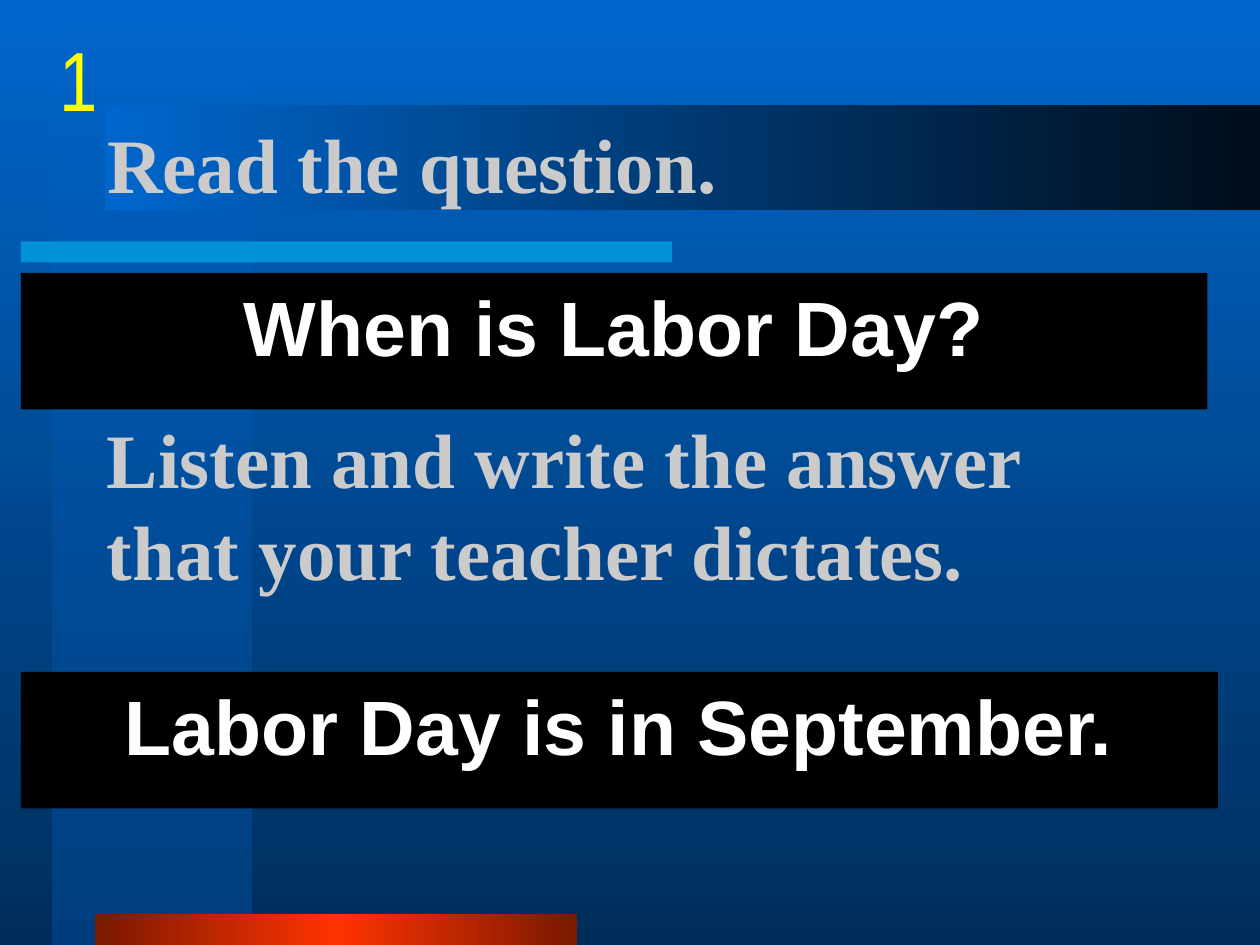
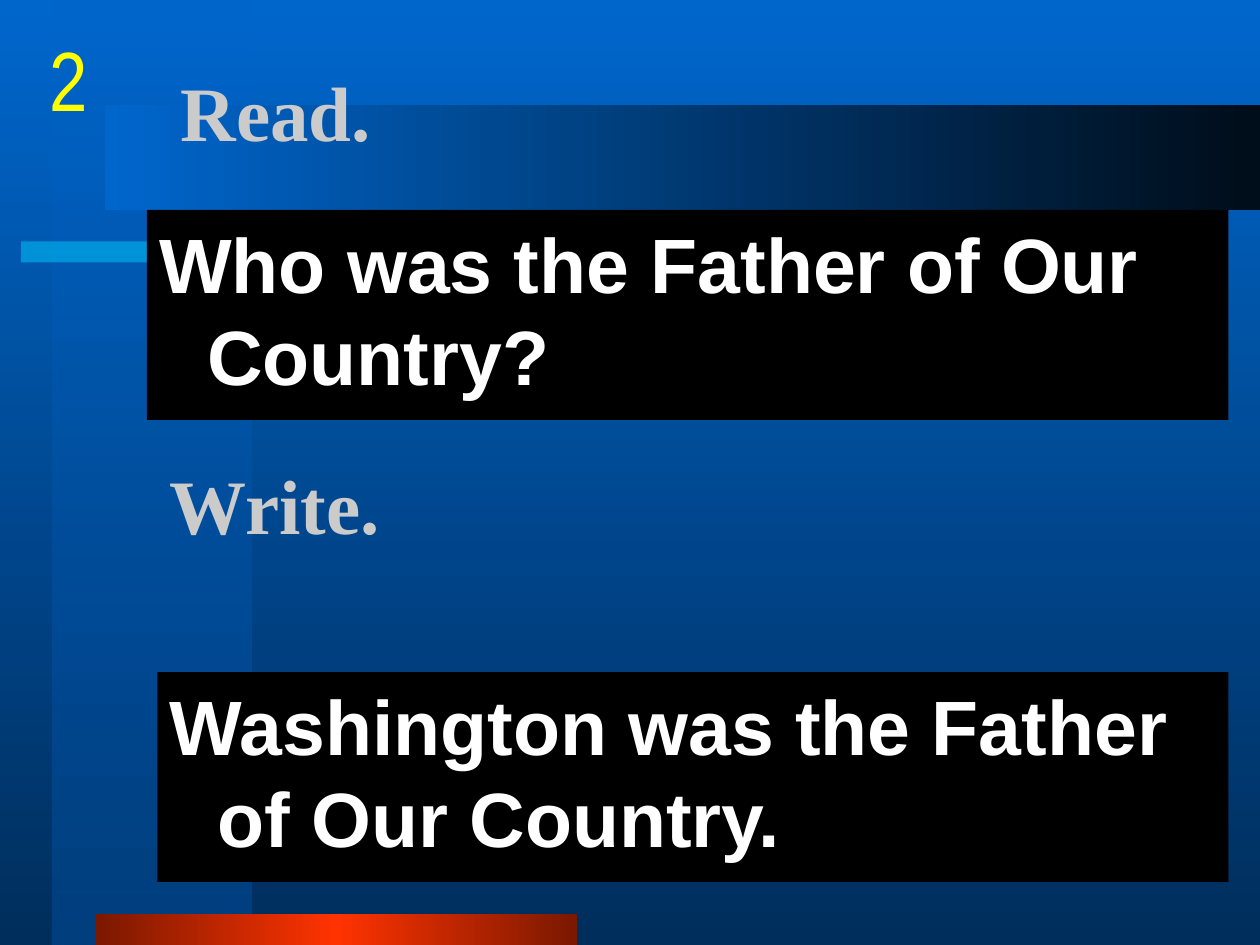
"""Build two dictation slides: a question to read and an answer to write."""
from typing import Any, NamedTuple, Optional

import lxml.etree
import pptx
import pptx.dml.color
import pptx.enum.shapes
import pptx.enum.text
import pptx.oxml.ns
import pptx.util

RGB = pptx.dml.color.RGBColor
ALIGN = pptx.enum.text.PP_ALIGN
ANCHOR = pptx.enum.text.MSO_ANCHOR
qn = pptx.oxml.ns.qn

BLUE = RGB(0x00, 0x66, 0xCC)
NAVY = RGB(0x00, 0x2E, 0x5C)
SHADE = RGB(0x00, 0x3F, 0x7E)
INK = RGB(0x00, 0x0D, 0x1A)
CYAN = RGB(0x00, 0xCC, 0xFF)
RED = RGB(0xFF, 0x33, 0x00)
RUST = RGB(0x7A, 0x18, 0x00)
GREY = RGB(0xCB, 0xCB, 0xCB)
WHITE = RGB(0xFF, 0xFF, 0xFF)
BLACK = RGB(0x00, 0x00, 0x00)
GOLD = RGB(0xFF, 0xFF, 0x00)

WIDE = pptx.util.Inches(10)
HIGH = pptx.util.Inches(7.5)
COLS, ROWS = 120, 90
DOWN, ACROSS = 270, 0


class Box(NamedTuple):
    col: float
    row: float
    cols: float
    rows: float


class Stop(NamedTuple):
    color: RGB
    alpha: int = 100


class Band(NamedTuple):
    box: Box
    stops: list[Stop]
    angle: int = ACROSS


class Style(NamedTuple):
    font: str
    size: int
    color: RGB
    bold: bool = True
    align: ALIGN = ALIGN.LEFT
    anchor: ANCHOR = ANCHOR.TOP
    wrap: bool = True
    fill: Optional[RGB] = None
    hang: float = 0
    before: float = 0


class Label(NamedTuple):
    text: str
    box: Box


class Card(NamedTuple):
    title: Label
    ask: Label
    task: Label
    reply: Label
    number: Label
    align: ALIGN


HEAD = Style("Times New Roman", 44, GREY, anchor=ANCHOR.MIDDLE)
PANEL = Style("Arial", 44, WHITE, fill=BLACK, hang=0.38, before=3.6)
COUNT = Style("Arial Narrow", 48, GOLD, bold=False, align=ALIGN.CENTER, wrap=False)

BANDS = [
    Band(Box(5, 0, 19, 90), [Stop(BLUE, 50), Stop(SHADE)], DOWN),
    Band(Box(2, 23, 62, 2), [Stop(CYAN, 50)]),
    Band(Box(9, 87, 46, 3), [Stop(RUST), Stop(RED), Stop(RUST)]),
    Band(Box(10, 10, 110, 10), [Stop(BLUE), Stop(INK)]),
]

CARDS = [
    Card(
        Label("Read the question.", Box(9, 8, 102, 15)),
        Label("When is Labor Day?", Box(2, 26, 113, 13)),
        Label("Listen and write the answer that your teacher dictates.", Box(9, 38, 102, 20)),
        Label("Labor Day is in September.", Box(2, 64, 114, 13)),
        Label("1", Box(6, 2, 3, 10)),
        ALIGN.CENTER,
    ),
    Card(
        Label("Read.", Box(16, 3, 102, 15)),
        Label("Who was the Father of Our Country?", Box(14, 20, 103, 20)),
        Label("Write.", Box(15, 38, 102, 20)),
        Label("Washington was the Father of Our Country.", Box(15, 64, 102, 20)),
        Label("2", Box(4, 2, 5, 10)),
        ALIGN.LEFT,
    ),
]


def place(box: Box) -> tuple[int, int, int, int]:
    """Turn grid columns and rows into left, top, width and height."""
    return (
        round(WIDE * box.col / COLS),
        round(HIGH * box.row / ROWS),
        round(WIDE * box.cols / COLS),
        round(HIGH * box.rows / ROWS),
    )


def fade(node: Any, alpha: int) -> None:
    """Make a colour node partly transparent."""
    if alpha < 100:
        lxml.etree.SubElement(node, qn("a:alpha")).set("val", str(alpha * 1000))


def paint(fill: Any, root: Any, stops: list[Stop], angle: int) -> None:
    """Fill with one colour, or with a gradient of evenly spaced stops."""
    if len(stops) == 1:
        fill.solid()
        fill.fore_color.rgb = stops[0].color
        fade(next(root.iter(qn("a:srgbClr"))), stops[0].alpha)
        return
    fill.gradient()
    fill.gradient_angle = angle
    marks = next(root.iter(qn("a:gsLst")))
    for old in list(marks):
        marks.remove(old)
    for i, stop in enumerate(stops):
        mark = lxml.etree.SubElement(marks, qn("a:gs"))
        mark.set("pos", str(round(100000 * i / (len(stops) - 1))))
        tint = lxml.etree.SubElement(mark, qn("a:srgbClr"))
        tint.set("val", str(stop.color))
        fade(tint, stop.alpha)


def stripe(slide: Any, band: Band) -> None:
    """Draw one decorative band."""
    kind = pptx.enum.shapes.MSO_SHAPE.RECTANGLE
    shape = slide.shapes.add_shape(kind, *place(band.box))
    shape.shadow.inherit = False
    shape.line.fill.background()
    paint(shape.fill, shape.element, band.stops, band.angle)


def write(shape: Any, text: str, style: Style) -> None:
    """Put styled text into a shape."""
    if style.fill is not None:
        shape.fill.solid()
        shape.fill.fore_color.rgb = style.fill
    frame = shape.text_frame
    frame.text = text
    frame.word_wrap = style.wrap
    frame.auto_size = pptx.enum.text.MSO_AUTO_SIZE.NONE
    frame.vertical_anchor = style.anchor
    para = frame.paragraphs[0]
    para.alignment = style.align
    para.space_before = pptx.util.Pt(style.before)
    para.font.name = style.font
    para.font.size = pptx.util.Pt(style.size)
    para.font.bold = style.bold
    para.font.color.rgb = style.color
    if style.hang:
        props = para._p.get_or_add_pPr()
        hang = pptx.util.Inches(style.hang)
        props.set("marL", str(hang))
        props.set("indent", str(-hang))


def add(slide: Any, label: Label, style: Style) -> None:
    """Add a text box for a label."""
    write(slide.shapes.add_textbox(*place(label.box)), label.text, style)


def build(deck: Any, card: Card) -> None:
    """Add the slide for one card."""
    slide = deck.slides.add_slide(deck.slide_layouts[5])
    for band in BANDS:
        stripe(slide, band)
    title = slide.shapes.title
    title.element.getparent().append(title.element)
    title.left, title.top, title.width, title.height = place(card.title.box)
    write(title, card.title.text, HEAD)
    panel = PANEL._replace(align=card.align)
    add(slide, card.ask, panel)
    add(slide, card.task, HEAD)
    add(slide, card.reply, panel)
    add(slide, card.number, COUNT)


def main() -> None:
    """Build and save the deck."""
    deck = pptx.Presentation()
    deck.slide_width, deck.slide_height = WIDE, HIGH
    master = deck.slide_master
    paint(master.background.fill, master.element, [Stop(BLUE), Stop(NAVY)], DOWN)
    for card in CARDS:
        build(deck, card)
    deck.save("out.pptx")


if __name__ == "__main__":
    main()
